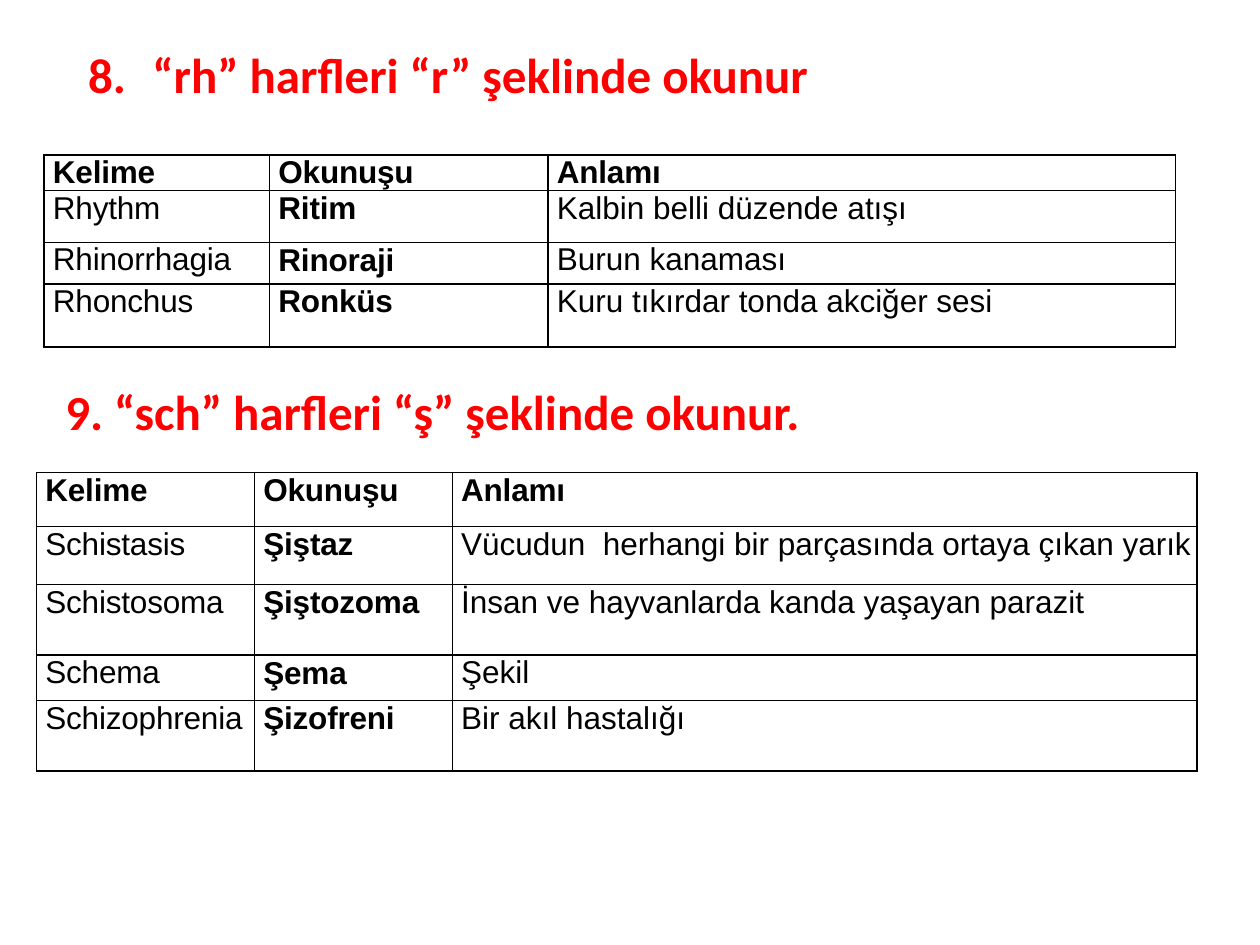
from dataclasses import dataclass

from lxml.etree import SubElement
from pptx import Presentation
from pptx.dml.color import RGBColor
from pptx.enum.text import MSO_ANCHOR, MSO_AUTO_SIZE, PP_ALIGN
from pptx.oxml import parse_xml
from pptx.oxml.ns import nsdecls, qn
from pptx.util import Inches, Pt


@dataclass(frozen=True)
class Theme:
    red: str = "FF0000"
    black: str = "000000"
    heading_font: str = "Calibri"
    table_font: str = "Arial"
    heading_size: int = 28
    table_size: int = 18
    border_width: int = 1
    cell_indent: float = 0.07
    cell_tracking: float = -0.1


def write_text(frame, text, *, font, size, color, bold=False, indent=0,
               hanging=0, line_spacing=None, tracking=0):
    """Fill the frame with one left-aligned paragraph; indents are in inches."""
    paragraph = frame.paragraphs[0]
    paragraph.alignment = PP_ALIGN.LEFT
    if line_spacing:
        paragraph.line_spacing = line_spacing
    properties = paragraph._p.get_or_add_pPr()
    properties.set("marL", str(Inches(indent)))
    properties.set("indent", str(-Inches(hanging)))
    run = paragraph.add_run()
    run.text = text
    run.font.name = font
    run.font.size = Pt(size)
    run.font.bold = bold
    run.font.color.rgb = RGBColor.from_string(color)
    if tracking:
        run._r.get_or_add_rPr().set("spc", str(round(tracking * 100)))


class SlideBuilder:
    def __init__(self, slide, theme):
        self.slide = slide
        self.theme = theme

    def write_heading(self, frame, text, **kwargs):
        frame.word_wrap = True
        write_text(frame, text, font=self.theme.heading_font,
                   size=self.theme.heading_size, color=self.theme.red,
                   bold=True, **kwargs)

    def title(self, text, left, top, width, height, tab):
        title = self.slide.shapes.title
        title.left, title.top = Inches(left), Inches(top)
        title.width, title.height = Inches(width), Inches(height)
        title.text_frame.vertical_anchor = MSO_ANCHOR.MIDDLE
        title.text_frame.auto_size = MSO_AUTO_SIZE.NONE
        self.write_heading(title.text_frame, text, indent=tab, hanging=tab)

    def heading(self, text, left, top, width, height):
        heading = self.slide.shapes.add_textbox(
            Inches(left), Inches(top), Inches(width), Inches(height))
        heading.text_frame.auto_size = MSO_AUTO_SIZE.SHAPE_TO_FIT_TEXT
        self.write_heading(heading.text_frame, text)

    def word_table(self, words, left, top, widths, heights):
        """Draw a bordered table with a bold header row and bold readings."""
        table = self.slide.shapes.add_table(
            len(heights), len(widths), Inches(left), Inches(top),
            Inches(sum(widths)), Inches(sum(heights))).table
        table.first_row = table.horz_banding = False
        for column, width in zip(table.columns, widths):
            column.width = Inches(width)
        for row, height in zip(table.rows, heights):
            row.height = Inches(height)
        for r, entry in enumerate(words):
            for c, text in enumerate(entry):
                is_header, is_reading, is_meaning = r == 0, c == 1, c == 2
                bold = is_header or is_reading
                cell = table.cell(r, c)
                self.style_cell(cell)
                write_text(
                    cell.text_frame, text, font=self.theme.table_font,
                    size=self.theme.table_size, color=self.theme.black,
                    bold=bold, indent=self.theme.cell_indent,
                    line_spacing=1.01 if bold else None,
                    tracking=0 if is_meaning and not is_header
                    else self.theme.cell_tracking)

    def style_cell(self, cell):
        cell.margin_left = cell.margin_right = 0
        cell.margin_top = cell.margin_bottom = 0
        cell.fill.background()
        properties = cell._tc.get_or_add_tcPr()
        for position, side in enumerate(("lnL", "lnR", "lnT", "lnB")):
            border = parse_xml(f"<a:{side} {nsdecls('a')}/>")
            border.set("w", str(Pt(self.theme.border_width)))
            fill = SubElement(border, qn("a:solidFill"))
            SubElement(fill, qn("a:srgbClr")).set("val", self.theme.black)
            properties.insert(position, border)


HEADER = ("Kelime", "Okunuşu", "Anlamı")
RH_WORDS = [
    HEADER,
    ("Rhythm", "Ritim", "Kalbin belli düzende atışı"),
    ("Rhinorrhagia", "Rinoraji", "Burun kanaması"),
    ("Rhonchus", "Ronküs", "Kuru tıkırdar tonda akciğer sesi"),
]
SCH_WORDS = [
    HEADER,
    ("Schistasis", "Şiştaz",
     "Vücudun  herhangi bir parçasında ortaya çıkan yarık"),
    ("Schistosoma", "Şiştozoma", "İnsan ve hayvanlarda kanda yaşayan parazit"),
    ("Schema", "Şema", "Şekil"),
    ("Schizophrenia", "Şizofreni", "Bir akıl hastalığı"),
]


def main():
    presentation = Presentation()
    presentation.slide_width = Inches(10)
    presentation.slide_height = Inches(7.5)
    title_only = presentation.slide_layouts[5]
    builder = SlideBuilder(presentation.slides.add_slide(title_only), Theme())

    builder.title("8.\t“rh” harfleri “r” şeklinde okunur",
                  0.6, 0.19, 8.96, 0.8, tab=0.51)
    builder.word_table(RH_WORDS, 0.35, 1.23, widths=(1.79, 2.21, 4.98),
                       heights=(0.25, 0.41, 0.33, 0.5))
    builder.heading("9. “sch” harfleri “ş” şeklinde okunur.",
                    0.42, 2.98, 8.96, 0.57)
    builder.word_table(SCH_WORDS, 0.29, 3.75, widths=(1.73, 1.57, 5.91),
                       heights=(0.43, 0.46, 0.56, 0.36, 0.56))
    presentation.save("out.pptx")


if __name__ == "__main__":
    main()
